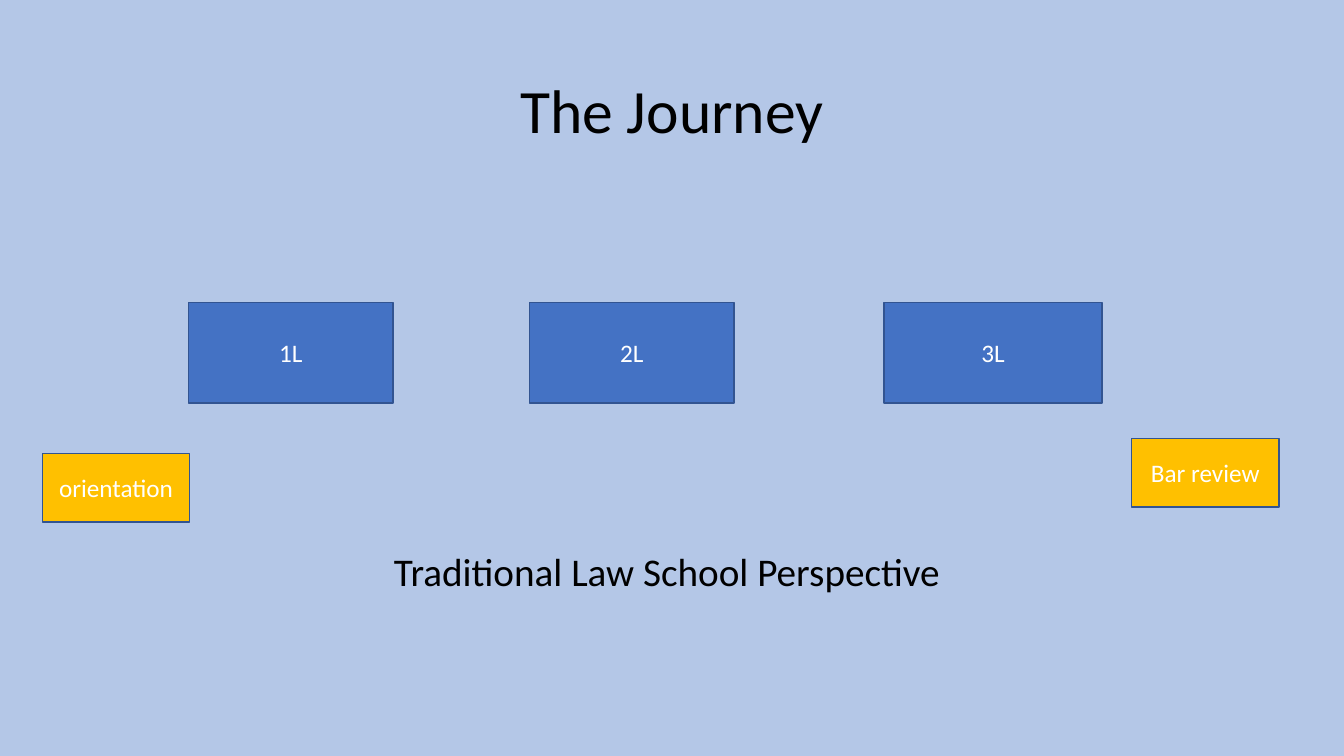
from pptx import Presentation
from pptx.dml.color import RGBColor
from pptx.enum.shapes import MSO_SHAPE
from pptx.enum.text import MSO_ANCHOR, PP_ALIGN
from pptx.util import Cm, Pt

TITLE = "The Journey"
CAPTION = "Traditional Law School Perspective"
YEARS = [("1L", 4.75, 5.16), ("2L", 13.34, 5.16), ("3L", 22.28, 5.49)]
MILESTONES = [("orientation", 1.07, 11.43), ("Bar review", 28.52, 11.05)]

BACKGROUND = RGBColor(0xB4, 0xC7, 0xE7)
BLUE = RGBColor(0x44, 0x72, 0xC4)
BORDER = RGBColor(0x32, 0x54, 0x91)
GOLD = RGBColor(0xFF, 0xC0, 0x00)
BLACK = RGBColor(0, 0, 0)
WHITE = RGBColor(0xFF, 0xFF, 0xFF)

YEAR_TOP, YEAR_HEIGHT = 7.62, 2.54
MILESTONE_WIDTH, MILESTONE_HEIGHT = 3.71, 1.73


def set_text(sp, text, size, color):
    tf = sp.text_frame
    tf.text = text
    tf.word_wrap = True
    tf.vertical_anchor = MSO_ANCHOR.MIDDLE
    p = tf.paragraphs[0]
    p.alignment = PP_ALIGN.CENTER
    font = p.runs[0].font
    font.name = "Calibri"
    font.size = Pt(size)
    font.color.rgb = color
    return p


def add_box(s, text, left, top, width, height, fill):
    sp = s.shapes.add_shape(
        MSO_SHAPE.RECTANGLE, Cm(left), Cm(top), Cm(width), Cm(height))
    sp.shadow.inherit = False
    sp.fill.solid()
    sp.fill.fore_color.rgb = fill
    sp.line.color.rgb = BORDER
    sp.line.width = Pt(1)
    set_text(sp, text, 18, WHITE)


def main():
    prs = Presentation()
    prs.slide_width, prs.slide_height = Cm(33.87), Cm(19.05)
    s = prs.slides.add_slide(prs.slide_layouts[5])
    s.background.fill.solid()
    s.background.fill.fore_color.rgb = BACKGROUND

    title = s.shapes.title
    title.left, title.top = Cm(2.33), Cm(1.01)
    title.width, title.height = Cm(29.21), Cm(3.68)
    set_text(title, TITLE, 44, BLACK).line_spacing = 0.9

    caption = s.shapes.add_textbox(Cm(2.2), Cm(13.68), Cm(29.21), Cm(1.4))
    set_text(caption, CAPTION, 28, BLACK)

    for text, left, width in YEARS:
        add_box(s, text, left, YEAR_TOP, width, YEAR_HEIGHT, BLUE)
    for text, left, top in MILESTONES:
        add_box(s, text, left, top, MILESTONE_WIDTH, MILESTONE_HEIGHT, GOLD)

    prs.save("out.pptx")


if __name__ == "__main__":
    main()
